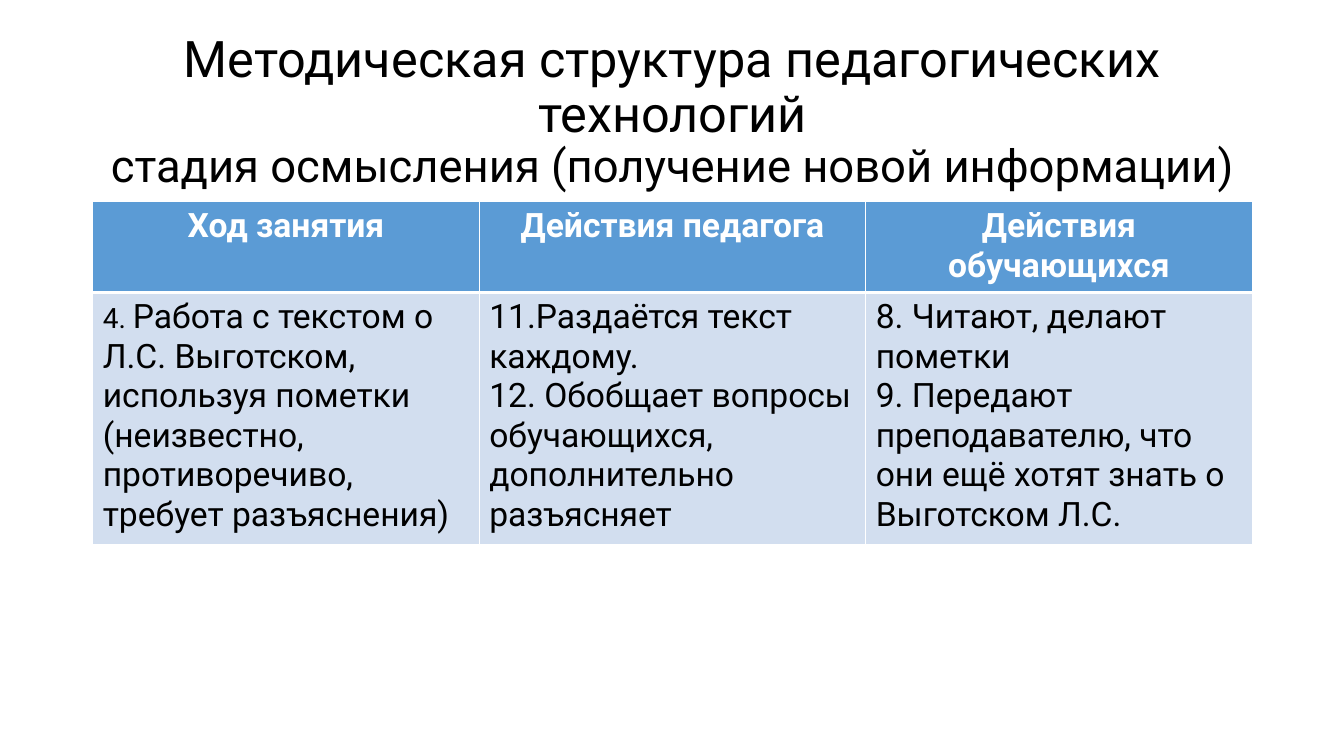
import pptx
import pptx.util
import pptx.dml.color
import pptx.enum.text
import pptx.oxml
import pptx.oxml.ns

Inches = pptx.util.Inches
Pt = pptx.util.Pt
ALIGN = pptx.enum.text.PP_ALIGN
ANCHOR = pptx.enum.text.MSO_ANCHOR


def shade(code):
    return pptx.dml.color.RGBColor.from_string(code)


def write(frame, paras, font="Roboto", color="000000", bold=False,
          align=ALIGN.LEFT, space=1.0):
    for i, runs in enumerate(paras):
        para = frame.paragraphs[0] if i == 0 else frame.add_paragraph()
        para.alignment = align
        para.line_spacing = space
        for text, size in runs:
            if text == "\n":
                para.add_line_break()
                continue
            run = para.add_run()
            run.text = text
            run.font.name = font
            run.font.size = Pt(size)
            run.font.bold = bold
            run.font.color.rgb = shade(color)


class Deck:
    """Holds the style and the current slide."""

    head = "5B9BD5"
    body = "D2DEEF"
    rule = "FFFFFF"
    size = 24

    def __init__(self):
        self.show = pptx.Presentation()
        self.show.slide_width = Inches(13.33)
        self.show.slide_height = Inches(7.5)
        self.slide = self.show.slides.add_slide(self.show.slide_layouts[6])

    def title(self, runs, left, top, width, height):
        box = self.slide.shapes.add_textbox(
            Inches(left), Inches(top), Inches(width), Inches(height))
        frame = box.text_frame
        frame.word_wrap = True
        frame.vertical_anchor = ANCHOR.MIDDLE
        write(frame, [runs], align=ALIGN.CENTER, space=0.9)

    def edge(self, cell, sides):
        props = cell._tc.get_or_add_tcPr()
        for i, (side, width) in enumerate(sides.items()):
            line = pptx.oxml.parse_xml(
                f'<a:ln{side} {pptx.oxml.ns.nsdecls("a")} w="{Pt(width)}">'
                f'<a:solidFill><a:srgbClr val="{self.rule}"/></a:solidFill>'
                f'</a:ln{side}>')
            props.insert(i, line)

    def table(self, heads, cells, left, top, width, rows):
        grid = self.slide.shapes.add_table(
            len(rows), len(heads), Inches(left), Inches(top),
            Inches(width), Inches(sum(rows))).table
        for row, height in zip(grid.rows, rows):
            row.height = Inches(height)
        for col, (head, paras) in enumerate(zip(heads, cells)):
            cell = grid.cell(0, col)
            write(cell.text_frame, [[(head, self.size)]], color="FFFFFF",
                  bold=True, align=ALIGN.CENTER)
            self.fill(cell, self.head, {"L": 1, "R": 1, "T": 1, "B": 3})
            cell = grid.cell(1, col)
            write(cell.text_frame, paras)
            self.fill(cell, self.body, {"L": 1, "R": 1, "T": 3, "B": 1})

    def fill(self, cell, color, sides):
        cell.fill.solid()
        cell.fill.fore_color.rgb = shade(color)
        self.edge(cell, sides)


def main():
    deck = Deck()
    size = deck.size
    deck.title([("Методическая структура педагогических технологий", 36),
                ("\n", 36),
                ("стадия осмысления (получение новой информации)", 32.4)],
               0.92, 0.4, 11.5, 1.45)
    heads = ["Ход занятия", "Действия педагога", "Действия обучающихся"]
    cells = [
        [[("4. ", 20),
          ("Работа с текстом о Л.С. Выготском, используя пометки "
           "(неизвестно, противоречиво, требует разъяснения)", size)]],
        [[("11.Раздаётся текст каждому.", size)],
         [("12. Обобщает вопросы обучающихся, дополнительно разъясняет",
           size)]],
        [[("8. Читают, делают пометки", size)],
         [("9. Передают преподавателю, что они ещё хотят знать о "
           "Выготском Л.С.", size)]],
    ]
    deck.table(heads, cells, 0.92, 2, 11.5, [0.87, 2.45])
    deck.show.save("out.pptx")


if __name__ == "__main__":
    main()
